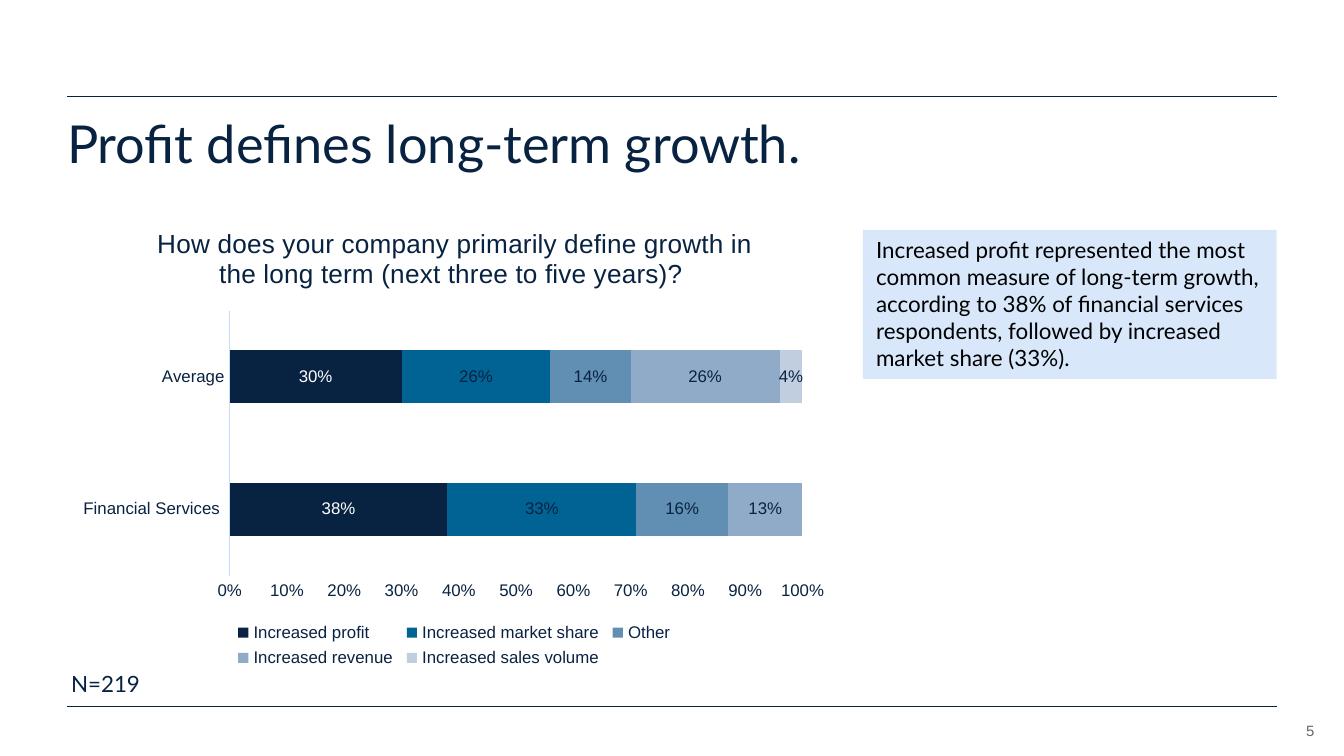
from lxml import etree
from pptx import Presentation
from pptx.chart.data import CategoryChartData
from pptx.dml.color import RGBColor
from pptx.enum.chart import XL_CHART_TYPE as ChartType
from pptx.enum.chart import XL_LABEL_POSITION as LabelPosition
from pptx.enum.chart import XL_LEGEND_POSITION as LegendPosition
from pptx.enum.chart import XL_TICK_MARK as TickMark
from pptx.enum.shapes import MSO_CONNECTOR as Connector
from pptx.enum.shapes import MSO_SHAPE as Shape
from pptx.enum.text import MSO_ANCHOR as Anchor
from pptx.enum.text import PP_ALIGN as Align
from pptx.oxml.ns import qn
from pptx.util import Pt

EMU_PER_PX = 4572  # 200 px to the inch
NAVY = RGBColor(0x08, 0x22, 0x41)
TEAL = RGBColor(0x00, 0x63, 0x93)
STEEL = RGBColor(0x61, 0x8E, 0xB3)
MIST = RGBColor(0x8F, 0xAB, 0xC8)
HAZE = RGBColor(0xC1, 0xCE, 0xDF)
AXIS_BLUE = RGBColor(0xC5, 0xDC, 0xF8)
PALE_BLUE = RGBColor(0xD8, 0xE8, 0xFA)
GRAY = RGBColor(0x66, 0x66, 0x66)
WHITE = RGBColor(0xFF, 0xFF, 0xFF)
BLACK = RGBColor(0x00, 0x00, 0x00)

CATEGORIES = ["Financial Services ", "Average"]
# name, values, fill, label colour
ANSWERS = [
    ("Increased profit", (0.38, 0.30), NAVY, WHITE),
    ("Increased market share", (0.33, 0.26), TEAL, NAVY),
    ("Other", (0.16, 0.14), STEEL, NAVY),
    ("Increased revenue", (0.13, 0.26), MIST, NAVY),
    ("Increased sales volume", (0, 0.04), HAZE, NAVY),
]


def px(*lengths):
    return [length * EMU_PER_PX for length in lengths]


def style_font(font, size, color=NAVY, name="Arial"):
    font.size, font.name, font.bold = Pt(size), name, False
    font.color.rgb = color


def write(shape, text, size=12, color=NAVY, font="Lato", align=Align.LEFT,
          anchor=Anchor.TOP, inset=(20, 10), spacing=None):
    frame = shape.text_frame
    frame.word_wrap = True
    frame.vertical_anchor = anchor
    frame.margin_left = frame.margin_right = px(inset[0])[0]
    frame.margin_top = frame.margin_bottom = px(inset[1])[0]
    paragraph = frame.paragraphs[0]
    paragraph.alignment = align
    paragraph.line_spacing = spacing
    run = paragraph.add_run()
    run.text = text
    style_font(run.font, size, color, font)


def add_rule(slide, left, top, width):
    rule = slide.shapes.add_connector(
        Connector.STRAIGHT, *px(left, top, left + width, top))
    rule.line.color.rgb = NAVY
    rule.line.width = Pt(0.5)
    etree.SubElement(rule._element.spPr, qn("a:effectLst"))


def place_part(part, index, **fractions):
    """Fix a chart part at fractions of the chart's width and height."""
    for old in part.findall(qn("c:layout")):
        part.remove(old)
    layout = etree.Element(qn("c:layout"))
    manual = etree.SubElement(layout, qn("c:manualLayout"))
    if part.tag == qn("c:plotArea"):
        etree.SubElement(manual, qn("c:layoutTarget")).set("val", "inner")
    for mode in ("xMode", "yMode"):
        etree.SubElement(manual, qn("c:" + mode)).set("val", "edge")
    for key, value in fractions.items():
        etree.SubElement(manual, qn("c:" + key)).set("val", str(value))
    part.insert(index, layout)


def drop_label(labels, point):
    label = etree.Element(qn("c:dLbl"))
    etree.SubElement(label, qn("c:idx")).set("val", str(point))
    etree.SubElement(label, qn("c:delete")).set("val", "1")
    labels._element.insert(0, label)


def style_axis(axis):
    axis.major_tick_mark = axis.minor_tick_mark = TickMark.NONE
    axis.has_major_gridlines = False
    style_font(axis.tick_labels.font, 9)


def add_growth_chart(slide, left, top, width, height):
    data = CategoryChartData(number_format="0%")
    data.categories = CATEGORIES
    for name, values, *_ in ANSWERS:
        data.add_series(name, values)
    chart = slide.shapes.add_chart(
        ChartType.BAR_STACKED_100, *px(left, top, width, height), data).chart
    style_font(chart.font, 10)

    # Question
    chart.has_title = True
    question = chart.chart_title.text_frame.paragraphs[0].add_run()
    question.text = ("How does your company primarily define growth in "
                     "the long term (next three to five years)? ")
    style_font(question.font, 14)
    chart.chart_title.include_in_layout = False
    place_part(chart.chart_title._element, 1, x=0.11, y=0.03)

    # Axes
    style_axis(chart.category_axis)
    chart.category_axis.format.line.color.rgb = AXIS_BLUE
    chart.category_axis.format.line.width = Pt(0.75)
    shares = chart.value_axis
    style_axis(shares)
    shares.format.line.fill.background()
    shares.minimum_scale, shares.maximum_scale, shares.major_unit = 0, 1, 0.1
    shares.tick_labels.number_format = "0%"
    shares.tick_labels.number_format_is_linked = False

    # Bars
    plot = chart.plots[0]
    plot.gap_width, plot.overlap = 150, 100
    plot.vary_by_categories = False
    for series, (_, values, fill, label_color) in zip(plot.series, ANSWERS):
        series.format.fill.solid()
        series.format.fill.fore_color.rgb = fill
        labels = series.data_labels
        labels.show_value = True
        labels.position = LabelPosition.CENTER
        labels.number_format = "0%"
        labels.number_format_is_linked = False
        style_font(labels.font, 9, label_color)
        if 0 in values:
            drop_label(labels, values.index(0))
    plot_area = chart._chartSpace.chart.plotArea
    place_part(plot_area, 0, x=0.21, y=0.22, w=0.74, h=0.57)

    # Legend
    chart.has_legend = True
    chart.legend.position = LegendPosition.BOTTOM
    chart.legend.include_in_layout = False
    style_font(chart.legend.font, 9)
    place_part(chart.legend._element, 1, x=0.21, y=0.88, w=0.58, h=0.12)


def add_finding(slide, left, top, width, height):
    finding = slide.shapes.add_shape(
        Shape.RECTANGLE, *px(left, top, width, height))
    finding.shadow.inherit = False
    finding.fill.solid()
    finding.fill.fore_color.rgb = PALE_BLUE
    finding.line.fill.background()
    write(finding, "Increased profit represented the most common measure of "
          "long-term growth, according to 38% of financial services "
          "respondents, followed by increased market share (33%).",
          color=BLACK)


def add_heading(slide, left, top, width, height):
    heading = slide.shapes.title
    heading.left, heading.top, heading.width, heading.height = px(
        left, top, width, height)
    write(heading, "Profit defines long-term growth.", size=28,
          inset=(0, 0), spacing=0.9)


def add_note(slide, left, top, width, height, text, **text_format):
    note = slide.shapes.add_textbox(*px(left, top, width, height))
    write(note, text, **text_format)


def main():
    deck = Presentation()
    deck.slide_width, deck.slide_height = px(2000, 1125)
    slide = deck.slides.add_slide(deck.slide_layouts[5])
    for rule_top in (144, 1052):
        add_rule(slide, 100, rule_top, 1800)
    add_note(slide, 1862, 1064, 94, 36, "5", size=8, color=GRAY, font="Arial",
             align=Align.RIGHT, anchor=Anchor.BOTTOM, inset=(0, 0))
    add_heading(slide, 100, 176, 1800, 110)
    add_finding(slide, 1284, 342, 616, 222)
    add_note(slide, 86, 988, 362, 60, "N=219")
    add_growth_chart(slide, 100, 310, 1152, 692)
    deck.save("out.pptx")


if __name__ == "__main__":
    main()
